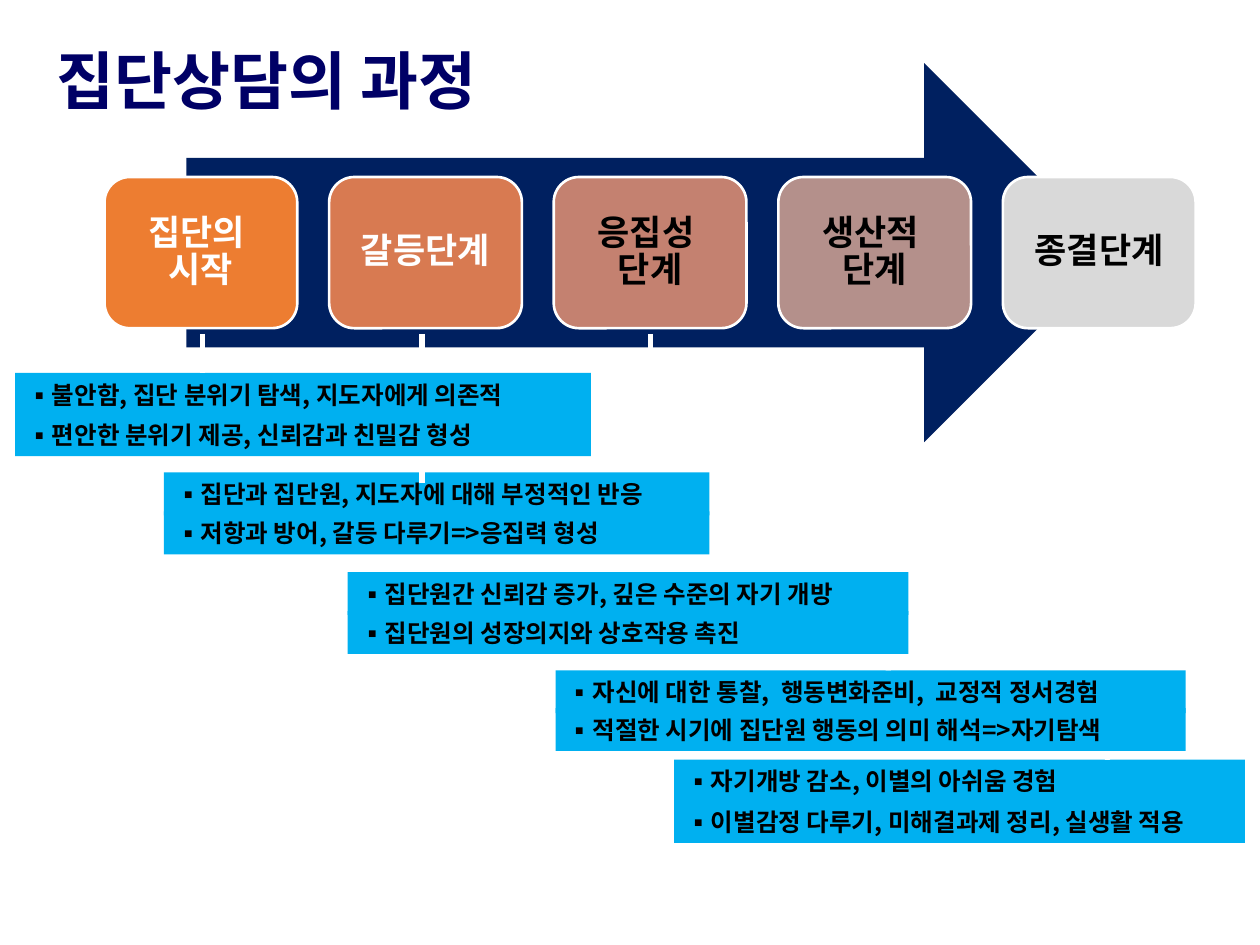
from pptx import Presentation
from pptx.dml.color import RGBColor
from pptx.enum.shapes import MSO_CONNECTOR, MSO_SHAPE
from pptx.enum.text import MSO_ANCHOR, PP_ALIGN
from pptx.oxml.ns import qn
from pptx.util import Inches, Pt
from lxml import etree

RECT, ROUNDED, ARROW = MSO_SHAPE.RECTANGLE, MSO_SHAPE.ROUNDED_RECTANGLE, MSO_SHAPE.RIGHT_ARROW
STRAIGHT = MSO_CONNECTOR.STRAIGHT
TOP, MIDDLE = MSO_ANCHOR.TOP, MSO_ANCHOR.MIDDLE
LEFT, CENTER = PP_ALIGN.LEFT, PP_ALIGN.CENTER

FONT = "Noto Sans CJK KR"
WHITE = RGBColor(0xFF, 0xFF, 0xFF)
BLACK = RGBColor(0x00, 0x00, 0x00)
TITLE_BLUE = RGBColor(0x00, 0x00, 0x66)
NAVY = RGBColor(0x00, 0x20, 0x60)
SKY = RGBColor(0x00, 0xB0, 0xF0)
ORANGE = RGBColor(0xED, 0x7D, 0x31)
TERRACOTTA = RGBColor(0xD8, 0x7A, 0x51)
ROSE = RGBColor(0xC4, 0x81, 0x70)
TAUPE = RGBColor(0xB4, 0x90, 0x8B)
GRAY = RGBColor(0xD9, 0xD9, 0xD9)

BAR_HEIGHT = 0.34

# Stage name, fill, text colour
STAGES = [
    ("집단의  시작", ORANGE, WHITE),
    ("갈등단계", TERRACOTTA, WHITE),
    ("응집성  단계", ROSE, BLACK),
    ("생산적  단계", TAUPE, BLACK),
    ("종결단계", GRAY, BLACK),
]

# Box (left, top, width), step between bars, connector (x1, y1, x2, y2), lines
NOTES = [
    ((0.12, 2.96, 4.57), 0.32, (1.61, 2.65, 1.61, 2.96),
     ["불안함, 집단 분위기 탐색, 지도자에게 의존적",
      "편안한 분위기 제공, 신뢰감과 친밀감 형성"]),
    ((1.3, 3.75, 4.33), 0.31, (3.35, 2.65, 3.35, 3.83),
     ["집단과 집단원, 지도자에 대해 부정적인 반응",
      "저항과 방어, 갈등 다루기=>응집력 형성"]),
    ((2.76, 4.54, 4.45), 0.31, (5.16, 2.65, 5.16, 4.54),
     ["집단원간 신뢰감 증가, 깊은 수준의 자기 개방",
      "집단원의 성장의지와 상호작용 촉진"]),
    ((4.41, 5.32, 5), 0.3, (7.03, 2.64, 7.05, 5.32),
     ["자신에 대한 통찰,  행동변화준비,  교정적 정서경험",
      "적절한 시기에 집단원 행동의 의미 해석=>자기탐색"]),
    ((5.35, 6.03, 4.53), 0.32, (8.76, 2.65, 8.79, 6.03),
     ["자기개방 감소, 이별의 아쉬움 경험",
      "이별감정 다루기, 미해결과제 정리, 실생활 적용"]),
]


def add_block(slide, kind, box, fill, line=None):
    s = slide.shapes.add_shape(kind, *map(Inches, box))
    s.shadow.inherit = False
    s.fill.solid()
    s.fill.fore_color.rgb = fill
    if line is None:
        s.line.fill.background()
    else:
        s.line.color.rgb = line
        s.line.width = Pt(1.5)
    return s


def write(s, text, size, color, align, anchor):
    tf = s.text_frame
    tf.word_wrap = True
    tf.vertical_anchor = anchor
    p = tf.paragraphs[0]
    p.alignment = align
    r = p.add_run()
    r.text = text
    r.font.name = FONT
    r.font.size = Pt(size)
    r.font.bold = True
    r.font.color.rgb = color
    # East Asian typeface
    etree.SubElement(r.font._element, qn("a:ea"), typeface=FONT)
    return p


def add_bullet(p):
    ppr = p._p.get_or_add_pPr()
    indent = Inches(0.12)
    ppr.set("marL", str(indent))
    ppr.set("indent", str(-indent))
    etree.SubElement(ppr, qn("a:buFont"), typeface=FONT)
    etree.SubElement(ppr, qn("a:buChar"), char="▪")


def add_title(slide, box):
    s = slide.shapes.title
    s.left, s.top, s.width, s.height = map(Inches, box)
    s.text_frame.margin_left = Inches(0.22)
    p = write(s, "집단상담의 과정", 36, TITLE_BLUE, LEFT, TOP)
    p.line_spacing = 1.0
    p.space_before = Pt(0)


def add_process(slide, box):
    left, top, width, height = box
    # Arrow behind the stages
    add_block(slide, ARROW, (left + 0.65, top, 7.36, height), NAVY)

    # Evenly spaced stages, centred on the arrow
    stage_w, stage_h = 1.53, 1.2
    pitch = (width - stage_w) / (len(STAGES) - 1)
    stage_top = top + (height - stage_h) / 2
    for i, (name, fill, color) in enumerate(STAGES):
        s = add_block(slide, ROUNDED, (left + i * pitch, stage_top, stage_w, stage_h), fill, WHITE)
        tf = s.text_frame
        tf.margin_left = tf.margin_right = Inches(0.14)
        p = write(s, name, 20, color, CENTER, MIDDLE)
        p.line_spacing = 0.9


def add_note(slide, box, step, ends, lines):
    left, top, width = box
    for i, text in enumerate(lines):
        s = add_block(slide, RECT, (left, top + i * step, width, BAR_HEIGHT), SKY)
        add_bullet(write(s, text, 14, BLACK, LEFT, MIDDLE))

    # Connector up to the stage
    c = slide.shapes.add_connector(STRAIGHT, *map(Inches, ends))
    c.line.color.rgb = WHITE
    c.line.width = Pt(3)
    etree.SubElement(c._element.spPr, qn("a:effectLst"))


def main():
    prs = Presentation()
    prs.slide_width, prs.slide_height = Inches(10), Inches(7.5)
    slide = prs.slides.add_slide(prs.slide_layouts[5])
    add_title(slide, (0.23, 0.28, 8.5, 0.94))
    # The last two notes lie behind the arrow, the others in front
    for note in reversed(NOTES[3:]):
        add_note(slide, *note)
    add_process(slide, (0.83, 0.5, 8.66, 3.01))
    for note in reversed(NOTES[:3]):
        add_note(slide, *note)
    prs.save("out.pptx")


if __name__ == "__main__":
    main()
